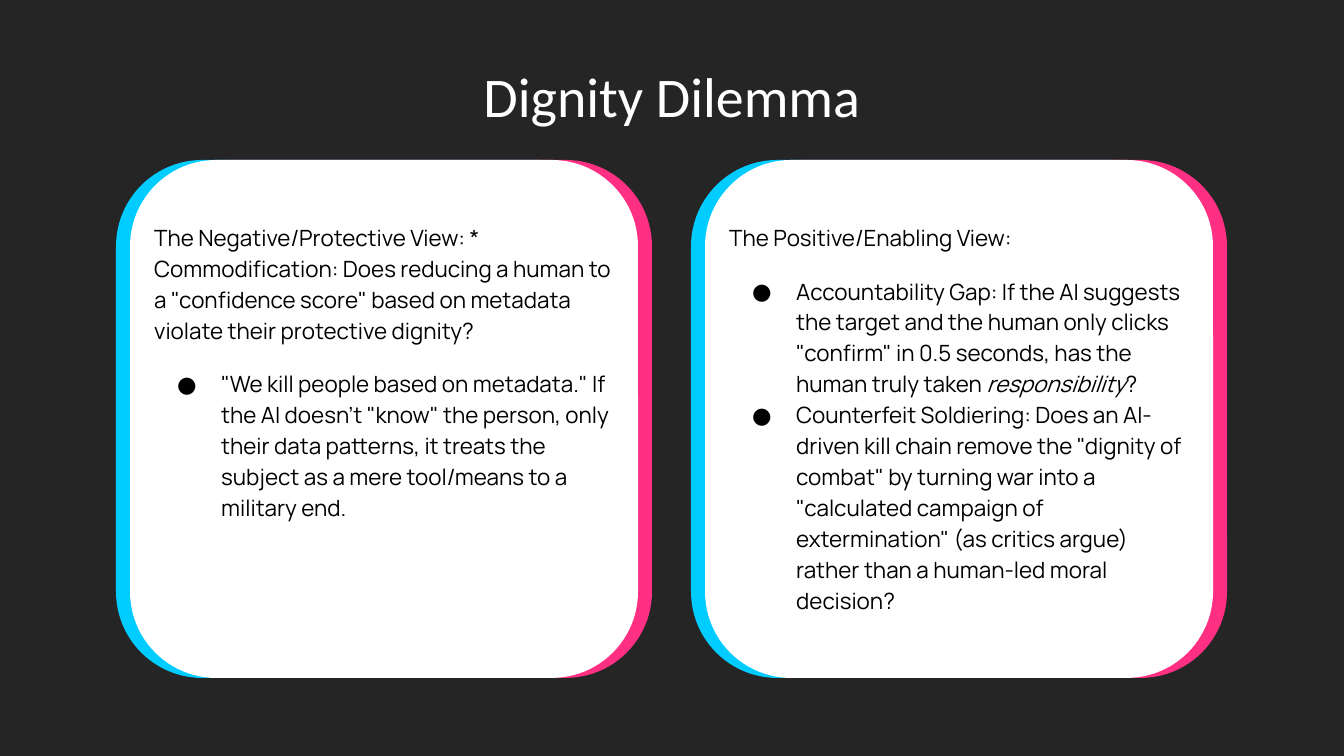
from lxml import etree
from pptx import Presentation, util as u
from pptx.dml.color import RGBColor
from pptx.enum import shapes, text
from pptx.oxml.ns import qn

COLORS = {"background": "262526", "cyan": "00CCFF", "pink": "FF3083",
          "white": "FFFFFF", "black": "000000"}
TITLE = "Dignity Dilemma"
VIEWS = [
    {"heading": 'The Negative/Protective View: * Commodification: Does reducing a human to '
                'a "confidence score" based on metadata violate their protective dignity?',
     "bullets": [
         ['"We kill people based on metadata." If the AI doesn\'t "know" the person, only '
          'their data patterns, it treats the subject as a mere tool/means to a military end.']]},
    {"heading": "The Positive/Enabling View:",
     "bullets": [
         ['Accountability Gap: If the AI suggests the target and the human only clicks '
          '"confirm" in 0.5 seconds, has the human truly taken ', "responsibility", "?"],
         ['Counterfeit Soldiering: Does an AI-driven kill chain remove the "dignity of combat" '
          'by turning war into a "calculated campaign of extermination" (as critics argue) '
          'rather than a human-led moral decision?']]},
]
EMPHASIS = "responsibility"
LAYERS = [("cyan", 116), ("pink", 144), ("white", 130)]
CARD_TOP, CARD_WIDTH, CARD_HEIGHT, CARD_PITCH = 160, 508, 518, 575
BODY = (141, 207, 487, 425)
TITLE_BOX = (105, 58, 1134, 84)


def px(n):
    return round(n * 914400 / 134.4)


def rgb(name):
    return RGBColor.from_string(COLORS[name])


def add_frame(box, anchor):
    frame = slide.shapes.add_textbox(*map(px, box)).text_frame
    frame.word_wrap = True
    frame.vertical_anchor = anchor
    frame.margin_left = frame.margin_right = u.Inches(0.1)
    frame.margin_top = frame.margin_bottom = u.Inches(0.1)
    return frame


def style(run, font, size, color):
    run.font.name, run.font.size = font, u.Pt(size)
    run.font.color.rgb = rgb(color)


def add_bullet(paragraph):
    props = paragraph._p.get_or_add_pPr()
    props.set("marL", str(px(67)))
    props.set("indent", str(-px(44)))
    tint = etree.SubElement(props, qn("a:buClr"))
    etree.SubElement(tint, qn("a:srgbClr"), val=COLORS["black"])
    etree.SubElement(props, qn("a:buFont"), typeface="Manrope")
    etree.SubElement(props, qn("a:buChar"), char="●")


def add_card(shift):
    for color, left in LAYERS:
        card = slide.shapes.add_shape(
            shapes.MSO_SHAPE.ROUNDED_RECTANGLE,
            px(left + shift), px(CARD_TOP), px(CARD_WIDTH), px(CARD_HEIGHT))
        card.adjustments[0] = 0.17
        card.shadow.inherit = False
        card.fill.solid()
        card.fill.fore_color.rgb = rgb(color)
        card.line.fill.background()


def add_view(view, shift):
    left, top, width, height = BODY
    frame = add_frame((left + shift, top, width, height), text.MSO_ANCHOR.TOP)
    for i, parts in enumerate([[view["heading"]]] + view["bullets"]):
        paragraph = frame.add_paragraph() if i else frame.paragraphs[0]
        paragraph.line_spacing = 1.15
        paragraph.space_before = u.Pt(12 if i < 2 else 0)
        if i:
            add_bullet(paragraph)
        for part in parts:
            run = paragraph.add_run()
            run.text = part
            style(run, "Manrope", 12, "black")
            if part == EMPHASIS:
                run.font.italic = True


deck = Presentation()
deck.slide_width, deck.slide_height = px(1344), px(756)
slide = deck.slides.add_slide(deck.slide_layouts[6])
slide.background.fill.solid()
slide.background.fill.fore_color.rgb = rgb("background")

for column, view in enumerate(VIEWS):
    add_card(column * CARD_PITCH)
    add_view(view, column * CARD_PITCH)

title = add_frame(TITLE_BOX, text.MSO_ANCHOR.BOTTOM)
title.text = TITLE
title.paragraphs[0].alignment = text.PP_ALIGN.CENTER
style(title.paragraphs[0].runs[0], "Calibri", 30, "white")

deck.save("out.pptx")
